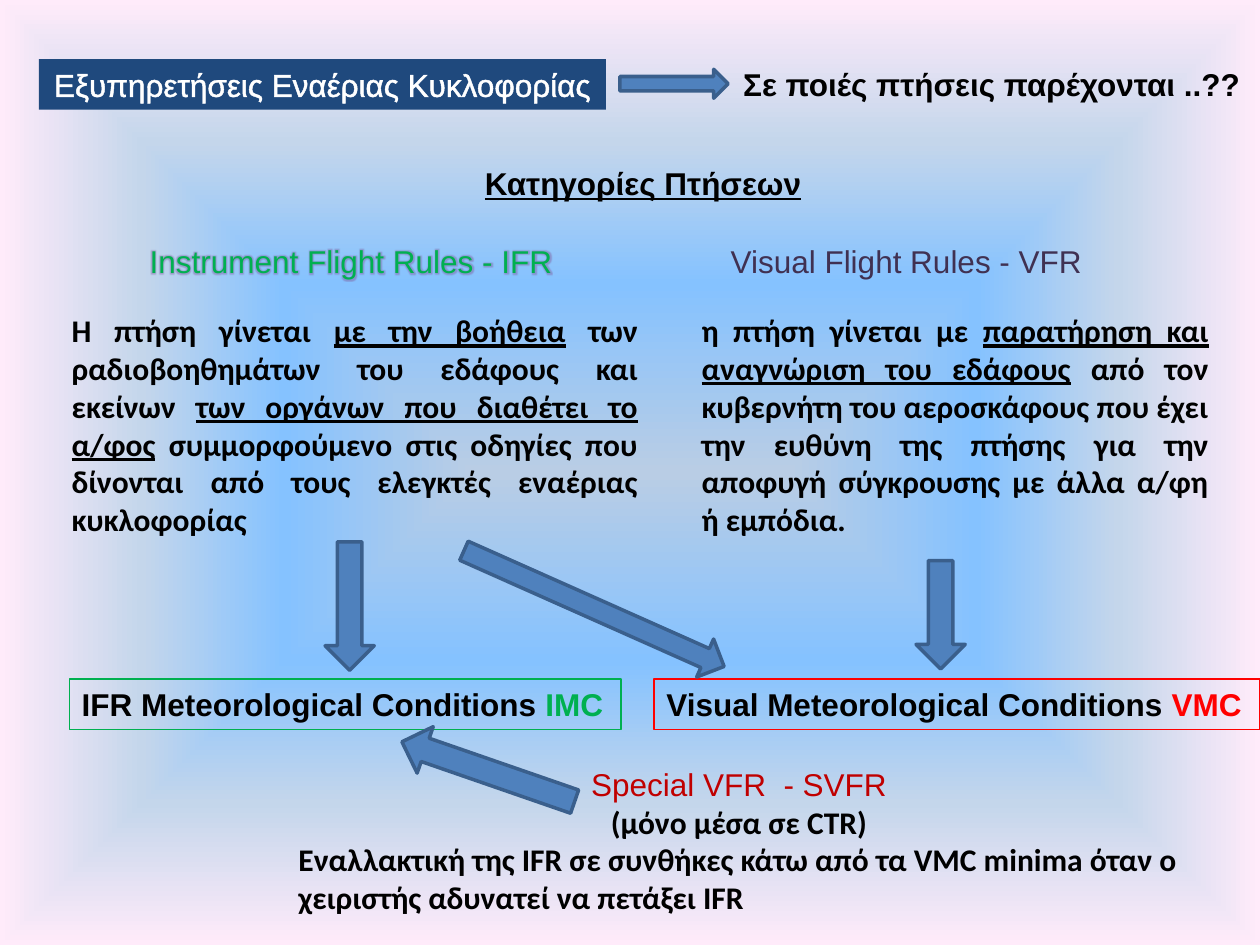
from dataclasses import dataclass
from typing import NamedTuple, Optional

from lxml import etree
from pptx import Presentation
from pptx import util as u
from pptx.dml.color import RGBColor
from pptx.enum import shapes, text
from pptx.oxml import parse_xml
from pptx.oxml.ns import qn

# Grid: 100 columns by 75 rows of square cells
COLUMNS, ROWS = 100, 75
CELL = u.Inches(0.1)
TEXT_SIZE = u.Pt(18)

COLOURS = {
    "black": "000000", "white": "FFFFFF", "navy": "1F497D", "green": "00B050",
    "plum": "403152", "red": "FF0000", "crimson": "C00000", "orange": "E46C0A",
    "ink": "054697", "violet": "8064A2", "arrow": "4F81BD", "arrow edge": "3A5F8C",
}
BACKDROP = [(0, "B9CDE5"), (40, "85C2FF"), (70, "C4D6EB"), (100, "FFEBFA")]
DRAWING = "http://schemas.openxmlformats.org/drawingml/2006/main"
PRESENTATION = "http://schemas.openxmlformats.org/presentationml/2006/main"
LEFT, CENTRE, JUSTIFY = (text.PP_ALIGN.LEFT, text.PP_ALIGN.CENTER,
                         text.PP_ALIGN.JUSTIFY)
DOWN, RIGHT = shapes.MSO_SHAPE.DOWN_ARROW, shapes.MSO_SHAPE.RIGHT_ARROW


class Box(NamedTuple):
    column: float
    row: float
    columns: float
    rows: float

    def lengths(self) -> list[int]:
        return [round(cells * CELL) for cells in self]


class Words(NamedTuple):
    content: str
    colour: str = "black"
    font: str = "Arial"
    bold: bool = False
    underline: bool = False
    outline: Optional[str] = None
    outline_width: float = 1.45
    glow: Optional[str] = None


class Line(NamedTuple):
    words: list[Words]
    align: text.PP_ALIGN = LEFT


@dataclass
class Label:
    box: Box
    lines: list[Line]
    wrap: bool = False
    fill: Optional[str] = None
    border: Optional[str] = None


@dataclass
class Arrow:
    box: Box
    kind: shapes.MSO_SHAPE = DOWN
    rotation: float = 0


def body(content: str, underline: bool = False) -> Words:
    return Words(content, font="Calibri", bold=True, underline=underline)


def heading(column: float, row: float, columns: float, words: Words) -> Label:
    return Label(Box(column, row, columns, 4), [Line([words])])


def conditions(column: float, columns: float, rules: str, code: str, colour: str) -> Label:
    words = [Words(f"{rules} Meteorological Conditions ", bold=True),
             Words(code, colour, bold=True)]
    return Label(Box(column, 53.9, columns, 4), [Line(words)], border=colour)


LABELS = [
    # Question and the two kinds of flight
    heading(58, 4.7, 42, Words("Σε ποιές πτήσεις παρέχονται ..??", bold=True,
                               outline="ink", outline_width=1)),
    heading(37.5, 12.5, 27.4, Words("Κατηγορίες Πτήσεων", bold=True, underline=True)),
    heading(10.9, 18.7, 34.3, Words("Instrument Flight Rules - IFR", "green",
                                    outline="green", glow="violet")),
    heading(57, 18.7, 30.2, Words("Visual Flight Rules - VFR", "plum", outline="red")),
    # Explanations
    Label(Box(4.7, 24.2, 46.9, 19.2), [Line([
        body("Η πτήση γίνεται "),
        body("με την βοήθεια", True),
        body(" των ραδιοβοηθημάτων του εδάφους και εκείνων "),
        body("των οργάνων που διαθέτει το α/φος", True),
        body(" συμμορφούμενο στις οδηγίες που δίνονται από τους ελεγκτές "
             "εναέριας κυκλοφορίας"),
    ], JUSTIFY)], wrap=True),
    Label(Box(54.7, 24.2, 42.2, 22.2), [Line([
        body("η πτήση γίνεται με "),
        body("παρατήρηση και αναγνώριση του εδάφους", True),
        body(" από τον κυβερνήτη του αεροσκάφους που έχει την ευθύνη της πτήσης "
             "για την αποφυγή σύγκρουσης με άλλα α/φη ή εμπόδια."),
    ], JUSTIFY)], wrap=True),
    # Weather conditions
    conditions(51.9, 48.1, "Visual", "VMC", "red"),
    conditions(5.5, 43.8, "IFR", "IMC", "green"),
    # Special VFR
    Label(Box(22.7, 60.2, 71.9, 13.1), [
        Line([Words(" "), Words("Special VFR  - SVFR ", "crimson", outline="orange")],
             CENTRE),
        Line([body("(μόνο μέσα σε CTR)")], CENTRE),
        Line([body("Εναλλακτική της IFR σε συνθήκες κάτω από τα VMC minima όταν ο "
                   "χειριστής αδυνατεί να πετάξει IFR")]),
    ], wrap=True),
    # Slide title
    Label(Box(3.1, 4.7, 45, 4), [Line([
        Words("Εξυπηρετήσεις Εναέριας Κυκλοφορίας", "white", outline="white")], CENTRE)],
        fill="navy"),
]

ARROWS = [
    Arrow(Box(25.8, 43, 3.9, 10.2)),
    Arrow(Box(72.7, 44.5, 3.9, 8.6)),
    Arrow(Box(45.5, 37, 3.3, 22.6), rotation=294),
    Arrow(Box(36.8, 54, 3.9, 14.5), rotation=109.1),
    Arrow(Box(49.2, 5.5, 8.6, 2.3), kind=RIGHT),
]


def rgb(name: str) -> RGBColor:
    return RGBColor.from_string(COLOURS[name])


def paint_backdrop(slide) -> None:
    stops = "".join(f'<a:gs pos="{share * 1000}"><a:srgbClr val="{colour}"/></a:gs>'
                    for share, colour in BACKDROP)
    slide.element.cSld.insert(0, parse_xml(
        f'<p:bg xmlns:p="{PRESENTATION}" xmlns:a="{DRAWING}"><p:bgPr>'
        f'<a:gradFill><a:gsLst>{stops}</a:gsLst><a:path path="shape">'
        '<a:fillToRect l="50000" t="50000" r="50000" b="50000"/></a:path></a:gradFill>'
        '<a:effectLst/></p:bgPr></p:bg>'))


def add_words(paragraph, words: Words) -> None:
    run = paragraph.add_run()
    run.text = words.content
    font = run.font
    font.name, font.size = words.font, TEXT_SIZE
    font.bold, font.underline = words.bold, words.underline
    font.color.rgb = rgb(words.colour)
    properties = run._r.get_or_add_rPr()
    if words.glow:
        effects = etree.Element(qn("a:effectLst"))
        glow = etree.SubElement(effects, qn("a:glow"), rad=str(u.Pt(4)))
        tint = etree.SubElement(glow, qn("a:srgbClr"), val=COLOURS[words.glow])
        etree.SubElement(tint, qn("a:alpha"), val="50000")
        properties.insert(1, effects)
    if words.outline:
        edge = etree.Element(qn("a:ln"), w=str(u.Pt(words.outline_width)))
        solid = etree.SubElement(edge, qn("a:solidFill"))
        etree.SubElement(solid, qn("a:srgbClr"), val=COLOURS[words.outline])
        properties.insert(0, edge)


def add_label(slide, label: Label) -> None:
    holder = slide.shapes.add_textbox(*label.box.lengths())
    if label.fill:
        holder.fill.solid()
        holder.fill.fore_color.rgb = rgb(label.fill)
    if label.border:
        holder.line.color.rgb = rgb(label.border)
        holder.line.width = u.Pt(0.75)
    frame = holder.text_frame
    frame.word_wrap = label.wrap
    frame.auto_size = text.MSO_AUTO_SIZE.SHAPE_TO_FIT_TEXT
    for index, line in enumerate(label.lines):
        paragraph = frame.add_paragraph() if index else frame.paragraphs[0]
        paragraph.alignment = line.align
        for words in line.words:
            add_words(paragraph, words)


def add_arrow(slide, arrow: Arrow) -> None:
    block = slide.shapes.add_shape(arrow.kind, *arrow.box.lengths())
    block.rotation = arrow.rotation
    block.shadow.inherit = False
    block.fill.solid()
    block.fill.fore_color.rgb = rgb("arrow")
    block.line.color.rgb = rgb("arrow edge")
    block.line.width = u.Pt(2)


def main() -> None:
    deck = Presentation()
    deck.slide_width, deck.slide_height = COLUMNS * CELL, ROWS * CELL
    slide = deck.slides.add_slide(deck.slide_layouts[6])
    paint_backdrop(slide)
    for label in LABELS:
        add_label(slide, label)
    for arrow in ARROWS:
        add_arrow(slide, arrow)
    deck.save("out.pptx")


if __name__ == "__main__":
    main()
